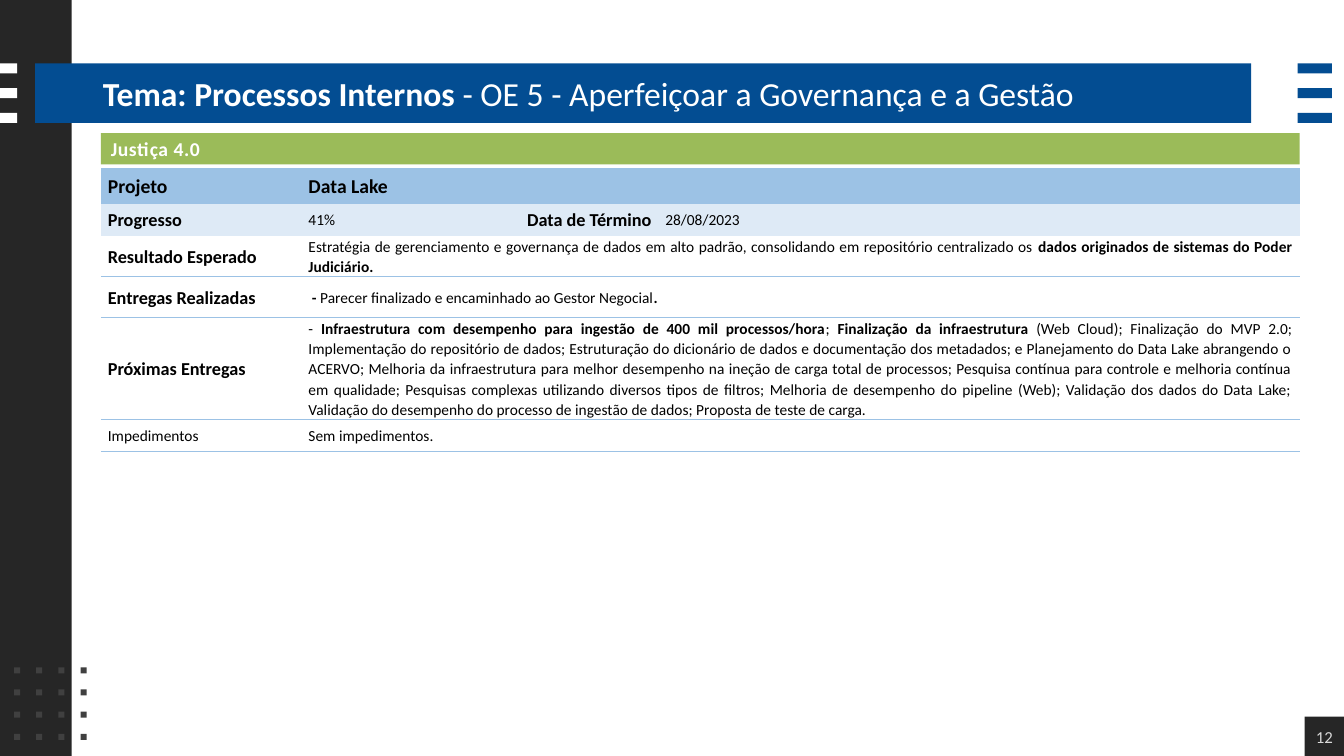
from pptx import Presentation
from pptx.dml.color import RGBColor
from pptx.enum.shapes import MSO_SHAPE as Shape
from pptx.enum.text import MSO_ANCHOR as Anchor, MSO_AUTO_SIZE as Auto, PP_ALIGN as Align
from pptx.oxml import parse_xml
from pptx.oxml.ns import nsdecls
from pptx.util import Inches, Pt

WIDE, HIGH = 13.33, 7.5
DARK, BLUE, WHITE, GREEN, GREY = "262626", "034D92", "FFFFFF", "9BBB59", "404040"
RULE = "9CC2E5"
PLAIN = "{2D5ABB26-0587-4C30-8999-92F81FD0307C}"

TITLE = "*Tema: Processos Internos *- OE 5 - Aperfeiçoar a Governança e a Gestão"
THEME = "*Justiça 4.0*"
PAGE = "12"

HEAD = dict(size=14)
LABEL = dict(size=13)
BODY = dict(size=11)
TEXT = dict(size=11, align=Align.JUSTIFY)

ROWS = [
    (0.35, "9CC2E5", [("*Projeto*", HEAD), ("*Data Lake*", HEAD)]),
    (0.32, "DEEAF6", [("*Progresso*", LABEL), ("41%", BODY),
                      ("*Data de Término*", dict(size=13, align=Align.RIGHT)),
                      ("28/08/2023", BODY)]),
    (0.4, None, [("*Resultado Esperado*", LABEL),
                 ("Estratégia de gerenciamento e governança de dados em alto padrão, "
                  "consolidando em repositório centralizado os "
                  "*dados originados de sistemas do Poder Judiciário.*", TEXT)]),
    (0.41, None, [("*Entregas Realizadas*", LABEL),
                  ("* - *Parecer finalizado e encaminhado ao Gestor Negocial*.*", TEXT)]),
    (1.01, None, [("*Próximas Entregas*", LABEL),
                  ("- *Infraestrutura com desempenho para ingestão de 400 mil processos/hora*; "
                   "*Finalização da infraestrutura *(Web Cloud); Finalização do MVP 2.0; "
                   "Implementação do repositório de dados; Estruturação do dicionário de dados "
                   "e documentação dos metadados; e Planejamento do Data Lake abrangendo o ACERVO; "
                   "Melhoria da infraestrutura para melhor desempenho na ineção de carga total de "
                   "processos; Pesquisa contínua para controle e melhoria contínua em qualidade; "
                   "Pesquisas complexas utilizando diversos tipos de filtros; Melhoria de desempenho "
                   "do pipeline (Web); Validação dos dados do Data Lake; Validação do desempenho do "
                   "processo de ingestão de dados; Proposta de teste de carga.", TEXT)]),
    (0.32, None, [("Impedimentos", BODY), ("Sem impedimentos.", TEXT)]),
]
COLS = [1.99, 1.77, 1.77, 6.36]


def color(code):
    return RGBColor.from_string(code)


def inch(*spots):
    return [Inches(spot) for spot in spots]


def block(spot, code):
    box = slide.shapes.add_shape(Shape.RECTANGLE, *inch(*spot))
    box.shadow.inherit = False
    box.fill.solid()
    box.fill.fore_color.rgb = color(code)
    box.line.fill.background()
    return box


def write(frame, text, size, ink="000000", align=Align.LEFT, gap=None):
    para = frame.paragraphs[0]
    para.alignment = align
    for turn, part in enumerate(text.split("*")):
        if part:
            run = para.add_run()
            run.text = part
            look = dict(name="Calibri", size=Pt(size), bold=turn % 2 == 1)
            for key, value in look.items():
                setattr(run.font, key, value)
            run.font.color.rgb = color(ink)
            if gap:
                run.font._element.set("spc", str(gap))
    return para


def rule(cell, side):
    line = parse_xml(
        f'<a:{side} {nsdecls("a")} w="12700"><a:solidFill>'
        f'<a:srgbClr val="{RULE}"/></a:solidFill></a:{side}>')
    cell._tc.get_or_add_tcPr().insert(0, line)


def fill_cell(cell, text, look):
    margins = dict(margin_left=Inches(0.07), margin_right=Inches(0.07),
                   margin_top=0, margin_bottom=0, vertical_anchor=Anchor.MIDDLE)
    for key, value in margins.items():
        setattr(cell, key, value)
    para = write(cell.text_frame, text, **look)
    para.line_spacing = 1.07
    para.space_after = Pt(8)


def add_grid():
    heights = [row[0] for row in ROWS]
    spot = inch(1, 1.67, sum(COLS), sum(heights))
    table = slide.shapes.add_table(len(ROWS), len(COLS), *spot).table
    table.first_row = table.horz_banding = False
    table._tbl.tblPr[0].text = PLAIN
    for col, width in zip(table.columns, COLS):
        col.width = Inches(width)
    for y, (height, tint, texts) in enumerate(ROWS):
        table.rows[y].height = Inches(height)
        for x in range(len(COLS)):
            cell = table.cell(y, x)
            if tint:
                cell.fill.solid()
                cell.fill.fore_color.rgb = color(tint)
            else:
                cell.fill.background()
                rule(cell, "lnB")
                if y > 2:
                    rule(cell, "lnT")
        if len(texts) == 2:
            table.cell(y, 1).merge(table.cell(y, 3))
        for x, (text, look) in enumerate(texts):
            fill_cell(table.cell(y, x), text, look)


deck = Presentation()
deck.slide_width, deck.slide_height = inch(WIDE, HIGH)
slide = deck.slides.add_slide(deck.slide_layouts[5])

block((0, 0, 0.71, HIGH), DARK)
block((0.35, 0.63, 12.06, 0.59), BLUE)
for left, width, code in [(0, 0.17, WHITE), (12.87, 0.34, BLUE)]:
    for step in range(3):
        block((left, 0.63 + 0.245 * step, width, 0.1), code)
for row in range(4):
    for col in range(4):
        block((0.14 + 0.22 * col, 6.62 + 0.22 * row, 0.06, 0.06), GREY)

title = slide.shapes.title
slide.shapes._spTree.append(title._element)
title.left, title.top, title.width, title.height = inch(0.92, 0.64, 11.5, 0.56)
frame = title.text_frame
frame.auto_size = Auto.NONE
frame.vertical_anchor = Anchor.MIDDLE
write(frame, TITLE, 24, WHITE)

side = 0.39
frame = block((WIDE - side, HIGH - side, side, side), DARK).text_frame
frame.margin_left = frame.margin_right = frame.margin_top = frame.margin_bottom = 0
frame.vertical_anchor = Anchor.MIDDLE
write(frame, PAGE, 12, "D9D9D9", Align.CENTER)

frame = block((1, 1.32, sum(COLS), 0.31), GREEN).text_frame
frame.vertical_anchor = Anchor.MIDDLE
write(frame, THEME, 14, WHITE, gap=40)

add_grid()
deck.save("out.pptx")
